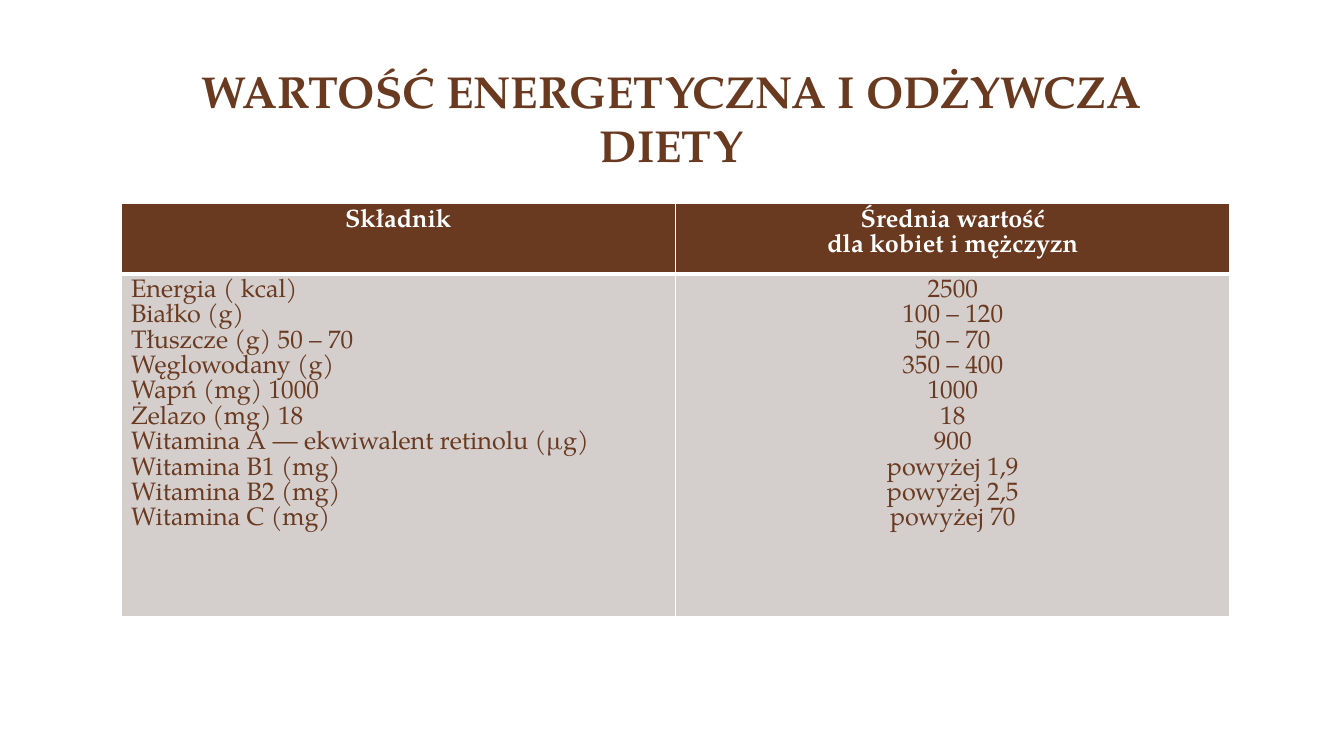
from dataclasses import dataclass

from lxml.etree import SubElement
from pptx import Presentation
from pptx.dml.color import RGBColor
from pptx.enum.text import MSO_ANCHOR, PP_ALIGN
from pptx.oxml.ns import qn
from pptx.util import Inches, Pt

TITLE = "WARTOŚĆ ENERGETYCZNA I ODŻYWCZA DIETY"
HEADINGS = ("Składnik", "Średnia wartość\ndla kobiet i mężczyzn")
NUTRIENTS = [
    ("Energia ( kcal)", "2500"),
    ("Białko (g)", "100 – 120"),
    ("Tłuszcze (g) 50 – 70", "50 – 70"),
    ("Węglowodany (g)", "350 – 400"),
    ("Wapń (mg) 1000", "1000"),
    ("Żelazo (mg) 18", "18"),
    ("Witamina A — ekwiwalent retinolu (µg)", "900"),
    ("Witamina B1 (mg)", "powyżej 1,9"),
    ("Witamina B2 (mg)", "powyżej 2,5"),
    ("Witamina C (mg)", "powyżej 70"),
]
ROW_HEIGHTS = (0.7, 3.4)
COLUMN_WIDTH = 5.5


@dataclass(frozen=True)
class Theme:
    """Colours, font and type sizes of the slide."""

    font: str = "TeX Gyre Pagella"
    brown: RGBColor = RGBColor(0x6A, 0x3A, 0x20)
    grey: RGBColor = RGBColor(0xD4, 0xCE, 0xCD)
    white: RGBColor = RGBColor(0xFF, 0xFF, 0xFF)
    title_size: Pt = Pt(32)
    title_pitch: Pt = Pt(38.6)
    table_size: Pt = Pt(18)
    table_pitch: Pt = Pt(18.1)


THEME = Theme()


def style_text(frame, size, pitch, color, bold, align):
    """Format every paragraph of a text frame alike."""
    for para in frame.paragraphs:
        para.alignment = align
        para.line_spacing = pitch
        para.space_before = para.space_after = Pt(0)
        for span in para.runs:
            span.font.name = THEME.font
            span.font.size = size
            span.font.bold = bold
            span.font.color.rgb = color


def set_borders(cell, bottom):
    """Draw white borders, with the bottom one at its own width."""
    properties = cell._tc.get_or_add_tcPr()
    widths = {"a:lnL": 1, "a:lnR": 1, "a:lnT": 1, "a:lnB": bottom}
    for index, (tag, width) in enumerate(widths.items()):
        line = SubElement(properties, qn(tag), w=str(Pt(width)))
        fill = SubElement(line, qn("a:solidFill"))
        SubElement(fill, qn("a:srgbClr"), val=str(THEME.white))
        properties.insert(index, line)


def add_title(page):
    """Place and format the slide title."""
    title = page.shapes.title
    title.left, title.top = Inches(1.33), Inches(0.47)
    title.width, title.height = Inches(10.66), Inches(1.28)
    frame = title.text_frame
    frame.text = TITLE
    frame.word_wrap = True
    frame.vertical_anchor = MSO_ANCHOR.BOTTOM
    style_text(frame, THEME.title_size, THEME.title_pitch, THEME.brown,
               True, PP_ALIGN.CENTER)


def add_nutrient_table(page):
    """Add the table with one heading row and one row of lists."""
    columns = ["\n".join(column) for column in zip(*NUTRIENTS)]
    rows = (HEADINGS, columns)
    table = page.shapes.add_table(
        len(rows), len(HEADINGS), Inches(1.2), Inches(2.02),
        Inches(COLUMN_WIDTH * len(HEADINGS)), Inches(sum(ROW_HEIGHTS))).table
    for r, texts in enumerate(rows):
        table.rows[r].height = Inches(ROW_HEIGHTS[r])
        heading = r == 0
        for c, text in enumerate(texts):
            cell = table.cell(r, c)
            cell.text_frame.text = text
            cell.fill.solid()
            cell.fill.fore_color.rgb = THEME.brown if heading else THEME.grey
            set_borders(cell, 3 if heading else 1)
            style_text(cell.text_frame, THEME.table_size, THEME.table_pitch,
                       THEME.white if heading else THEME.brown, heading,
                       PP_ALIGN.CENTER if heading or c else PP_ALIGN.LEFT)


def main():
    """Build the slide and save it."""
    deck = Presentation()
    deck.slide_width, deck.slide_height = Inches(13.33), Inches(7.5)
    page = deck.slides.add_slide(deck.slide_layouts[5])
    add_title(page)
    add_nutrient_table(page)
    deck.save("out.pptx")


if __name__ == "__main__":
    main()
